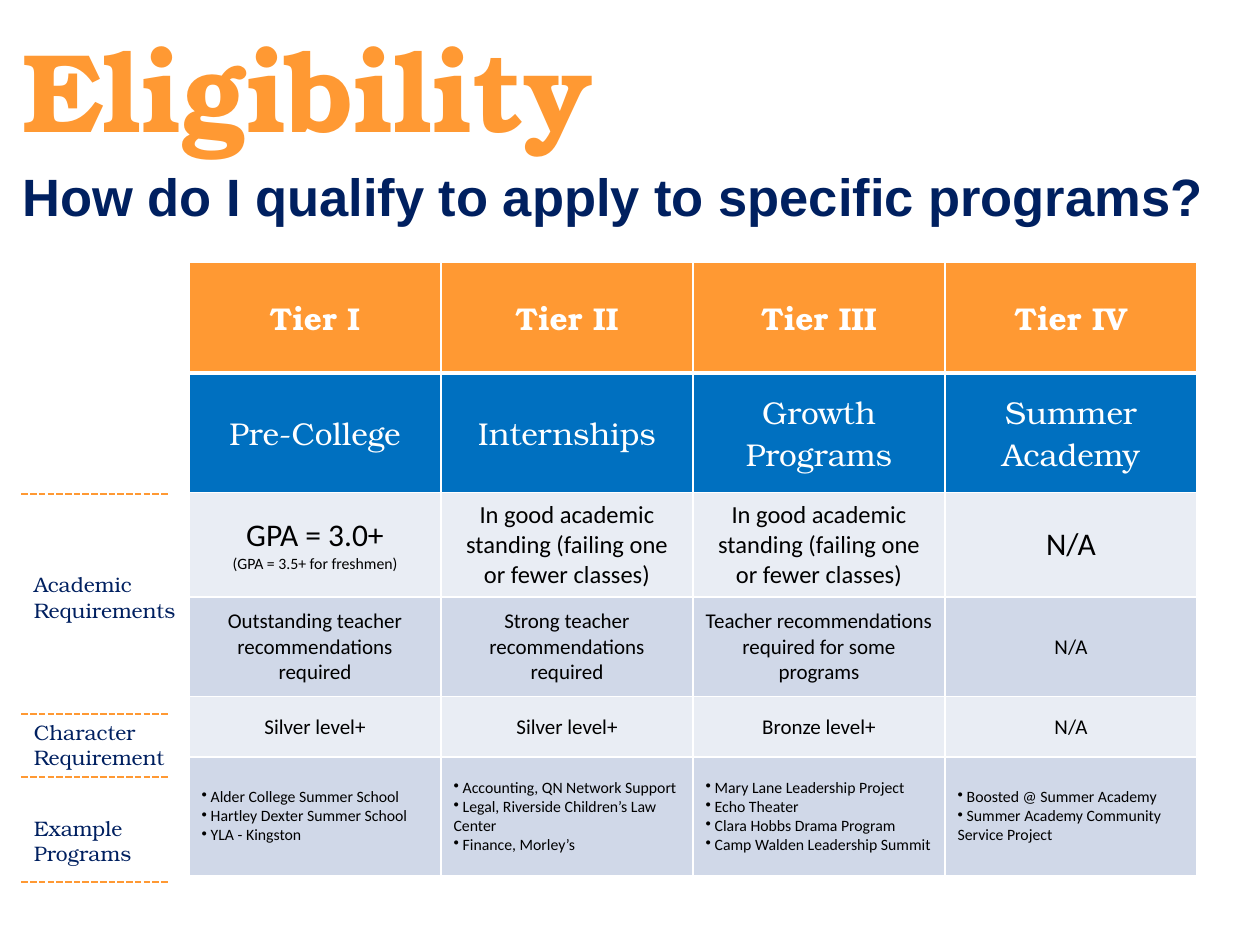
import pptx
import pptx.util
import pptx.dml.color
import pptx.enum.dml
import pptx.enum.shapes
import pptx.enum.text
import pptx.oxml
import pptx.oxml.ns
from lxml import etree

Inches, Pt = pptx.util.Inches, pptx.util.Pt
RGBColor = pptx.dml.color.RGBColor
qn = pptx.oxml.ns.qn
CENTER = pptx.enum.text.PP_ALIGN.CENTER
LEFT = pptx.enum.text.PP_ALIGN.LEFT
MIDDLE = pptx.enum.text.MSO_ANCHOR.MIDDLE
TOP = pptx.enum.text.MSO_ANCHOR.TOP

ORANGE = RGBColor(0xFF, 0x99, 0x33)
NAVY = RGBColor(0x00, 0x20, 0x60)
BLUE = RGBColor(0x00, 0x70, 0xC0)
PALE = RGBColor(0xE9, 0xED, 0xF4)
MIST = RGBColor(0xD0, 0xD8, 0xE8)
WHITE = RGBColor(0xFF, 0xFF, 0xFF)
BLACK = RGBColor(0x00, 0x00, 0x00)
SERIF, SANS, BODY = "TeX Gyre Bonum", "Arial", "Calibri"

# Content: each table row has a height, fill, text format and four cells;
# a cell is a list of paragraphs, each a string or a (string, size) pair
STANDING = "In good academic standing (failing one or fewer classes)"
TABLE_ROWS = [
    (0.88, ORANGE, dict(size=18, font=SERIF, color=WHITE, bold=True),
     [["Tier I"], ["Tier II"], ["Tier III"], ["Tier IV"]]),
    (0.95, BLUE, dict(size=18, font=SERIF, color=WHITE),
     [["Pre-College"], ["Internships"], ["Growth Programs"], ["Summer Academy"]]),
    (0.83, PALE, dict(size=14),
     [[("GPA = 3.0+", 18), ("(GPA = 3.5+ for freshmen)", 9)],
      [STANDING], [STANDING], [("N/A", 18)]]),
    (0.79, MIST, dict(size=12),
     [["Outstanding teacher recommendations required"],
      ["Strong teacher recommendations required"],
      ["Teacher recommendations required for some programs"], ["N/A"]]),
    (0.48, PALE, dict(size=12),
     [["Silver level+"], ["Silver level+"], ["Bronze level+"], ["N/A"]]),
    (0.94, MIST, dict(size=9, align=LEFT, bullet="•"),
     [[" Alder College Summer School", " Hartley Dexter Summer School",
       " YLA - Kingston"],
      [" Accounting, QN Network Support", " Legal, Riverside Children’s Law Center",
       " Finance, Morley’s"],
      [" Mary Lane Leadership Project", " Echo Theater",
       " Clara Hobbs Drama Program", " Camp Walden Leadership Summit"],
      [" Boosted @ Summer Academy", " Summer Academy Community Service Project"]]),
]
COLUMN_WIDTH, TABLE_LEFT, TABLE_TOP = 2, 1.5, 2.08

HEADINGS = [  # text, box, format
    ("Eligibility", (0.08, 0.06, 8.42, 1.27),
     dict(size=64, font=SERIF, color=ORANGE, bold=True, anchor=MIDDLE)),
    ("How do I qualify to apply to specific programs?", (0.08, 1.25, 9.75, 1.42),
     dict(size=30, font=SANS, color=NAVY, bold=True, space_before=3)),
]
LABEL_LEFT, LABEL_WIDTH, RULE_RIGHT = 0.17, 1.33, 1.33
LABELS = [  # paragraphs, top, height
    (["Academic Requirements"], 4.49, 1.51),
    (["Character", "Requirement"], 5.66, 0.5),
    (["Example Programs"], 6.42, 0.5),
]
RULE_TOPS = [3.92, 5.67, 6.17, 7]


def write_text(frame, paragraphs, size=12, font=BODY, color=BLACK, bold=False,
               align=LEFT, bullet=None, space_before=0):
    """Fill a text frame, one paragraph per item."""
    frame.word_wrap = True
    for index, item in enumerate(paragraphs):
        text, text_size = item if isinstance(item, tuple) else (item, size)
        paragraph = frame.paragraphs[0] if index == 0 else frame.add_paragraph()
        paragraph.alignment = align
        paragraph.space_before = Pt(space_before)
        if bullet:
            properties = paragraph._p.get_or_add_pPr()
            properties.set("marL", "0")
            properties.set("indent", "0")
            etree.SubElement(properties, qn("a:buChar")).set("char", bullet)
        run = paragraph.add_run()
        run.text = text
        run.font.size = Pt(text_size)
        run.font.name = font
        run.font.bold = bold
        run.font.color.rgb = color


def add_text_box(slide, paragraphs, box, anchor=TOP, **text_format):
    shape = slide.shapes.add_textbox(*map(Inches, box))
    shape.text_frame.vertical_anchor = anchor
    write_text(shape.text_frame, paragraphs, **text_format)


def style_cell(cell, fill, bottom_width):
    """Give a cell its fill and white borders."""
    cell.vertical_anchor = MIDDLE
    properties = cell._tc.get_or_add_tcPr()
    for side in ("L", "R", "T", "B"):
        width = bottom_width if side == "B" else 1
        border = etree.SubElement(properties, qn("a:ln" + side), w=str(Pt(width)))
        solid = etree.SubElement(border, qn("a:solidFill"))
        etree.SubElement(solid, qn("a:srgbClr"), val=str(WHITE))
    cell.fill.solid()
    cell.fill.fore_color.rgb = fill


def add_tier_table(slide):
    columns = len(TABLE_ROWS[0][3])
    total_height = sum(row[0] for row in TABLE_ROWS)
    table = slide.shapes.add_table(
        len(TABLE_ROWS), columns, Inches(TABLE_LEFT), Inches(TABLE_TOP),
        Inches(COLUMN_WIDTH * columns), Inches(total_height)).table
    table.first_row = table.horz_banding = False
    for row_index, (height, fill, text_format, cells) in enumerate(TABLE_ROWS):
        table.rows[row_index].height = Inches(height)
        for column_index, paragraphs in enumerate(cells):
            cell = table.cell(row_index, column_index)
            style_cell(cell, fill, bottom_width=3 if row_index == 0 else 1)
            write_text(cell.text_frame, paragraphs, **{"align": CENTER, **text_format})


def add_rule(slide, top):
    line = slide.shapes.add_connector(
        pptx.enum.shapes.MSO_CONNECTOR.STRAIGHT,
        Inches(LABEL_LEFT), Inches(top), Inches(RULE_RIGHT), Inches(top))
    line.line.color.rgb = ORANGE
    line.line.width = Pt(1.25)
    line.line.dash_style = pptx.enum.dml.MSO_LINE.SQUARE_DOT
    etree.SubElement(line._element.spPr, qn("a:effectLst"))


def main():
    presentation = pptx.Presentation()
    presentation.slide_width, presentation.slide_height = Inches(10), Inches(7.5)
    slide = presentation.slides.add_slide(presentation.slide_layouts[6])

    # Headings
    for text, box, text_format in HEADINGS:
        add_text_box(slide, [text], box, **text_format)

    # Tiers and their requirements
    add_tier_table(slide)

    # Row labels and the dashed rules between them
    for paragraphs, top, height in LABELS:
        add_text_box(slide, paragraphs, (LABEL_LEFT, top, LABEL_WIDTH, height),
                     font=SERIF, color=NAVY)
    for top in RULE_TOPS:
        add_rule(slide, top)

    presentation.save("out.pptx")


if __name__ == "__main__":
    main()
